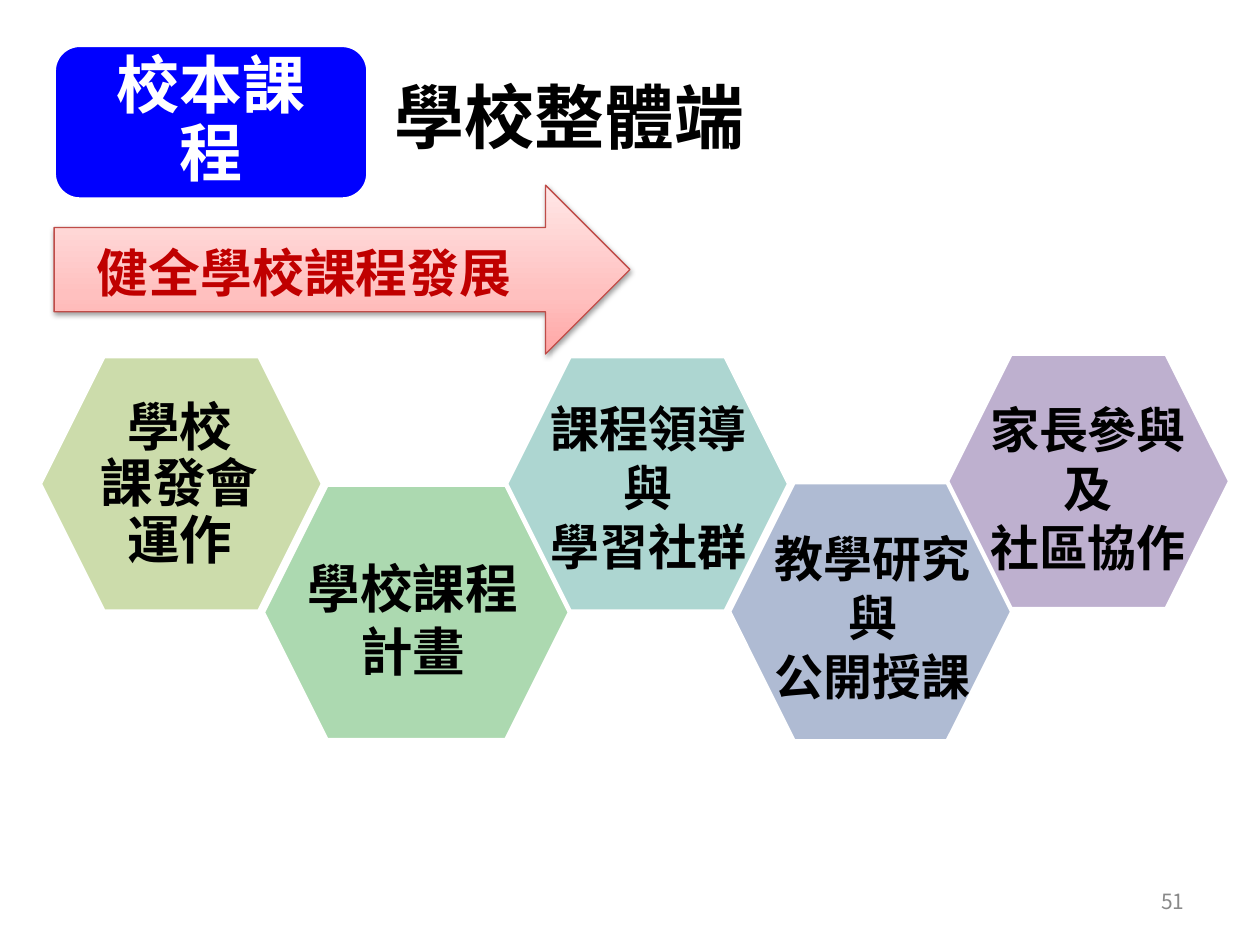
from lxml import etree
from pptx import Presentation
from pptx.dml.color import RGBColor
from pptx.enum import shapes as sh, text as tx
from pptx.oxml import parse_xml
from pptx.oxml.ns import nsdecls, qn
from pptx.util import Inches, Pt

FONT = "Noto Sans CJK SC"
HUES = {"ink": "000000", "white": "FFFFFF", "blue": "0000FF", "red": "C00000",
        "edge": "BF4C48", "gray": "898989", "olive": "9BBB59", "green": "5AB463",
        "teal": "5DAEA5", "slate": "6078A8", "plum": "7F63A1"}
BLUSH = [(0, "FFA6A5"), (35, "FFC0BF"), (100, "FFE7E7")]

TITLE = "學校整體端"
BADGE = "校本課程"
GOAL = "健全學校課程發展"
PAGE = "51"
# hue, hexagon box, text box, wording (\v breaks a line), size, line spacing
CELLS = [
    ("olive", (0.32, 2.83, 2.24, 2.02), (0.63, 3.14, 1.59, 1.43), "學校\v課發會運作", 30, 0.9),
    ("green", (2.09, 3.85, 2.43, 2.02), (2.29, 4.2, 1.97, 1.43), "學校課程計畫", 30, 1),
    ("teal", (4.02, 2.83, 2.24, 2.02), (4.24, 3.15, 1.81, 1.43), "課程領導與\v學習社群", 28, 1),
    ("slate", (5.79, 3.83, 2.24, 2.05), (6.02, 4.17, 1.81, 1.45), "教學研究與\n公開授課", 28, 1),
    ("plum", (7.52, 2.81, 2.24, 2.02), (7.65, 3.16, 1.97, 1.43), "家長參與及\n社區協作", 28, 1),
]


def rgb(hue):
    return RGBColor.from_string(HUES[hue])


def write(shape, words, size, hue="ink", bold=True, align=tx.PP_ALIGN.LEFT,
          anchor=tx.MSO_ANCHOR.TOP, pad=(0.1, 0.05), wrap=True, gap=1):
    frame = shape.text_frame
    frame.text = words
    frame.word_wrap = wrap
    frame.auto_size = tx.MSO_AUTO_SIZE.NONE
    frame.vertical_anchor = anchor
    frame.margin_left = frame.margin_right = Inches(pad[0])
    frame.margin_top = frame.margin_bottom = Inches(pad[1])
    for para in frame.paragraphs:
        para.alignment = align
        para.line_spacing = gap
        for run in para.runs:
            font = run.font
            font.name, font.size, font.bold = FONT, Pt(size), bold
            font.color.rgb = rgb(hue)
            east = etree.Element(qn("a:ea"), typeface=FONT)
            font._element.find(qn("a:latin")).addnext(east)


def draw(slide, kind, box, fill, line="white", width=2, alpha=None):
    shape = slide.shapes.add_shape(kind, *map(Inches, box))
    shape.shadow.inherit = False
    shape.fill.solid()
    shape.fill.fore_color.rgb = rgb(fill)
    shape.line.color.rgb = rgb(line)
    shape.line.width = Pt(width)
    if alpha:
        tint = shape._element.spPr.find(qn("a:solidFill"))[0]
        etree.SubElement(tint, qn("a:alpha"), val=str(alpha * 1000))
    return shape


def label(slide, box, *args, **style):
    write(slide.shapes.add_textbox(*map(Inches, box)), *args, **style)


def shade(shape):
    """Give the arrow its upward gradient and soft drop shadow."""
    props = shape._element.spPr
    stops = "".join(f'<a:gs pos="{pos * 1000}"><a:srgbClr val="{hue}"/></a:gs>'
                    for pos, hue in BLUSH)
    grad = parse_xml(f'<a:gradFill {nsdecls("a")} rotWithShape="1"><a:gsLst>{stops}'
                     '</a:gsLst><a:lin ang="16200000" scaled="0"/></a:gradFill>')
    props.replace(props.find(qn("a:solidFill")), grad)
    drop = parse_xml(f'<a:outerShdw {nsdecls("a")} blurRad="{Pt(3.1)}" dist="{Pt(1.6)}" '
                     'dir="5400000" rotWithShape="0"><a:srgbClr val="000000">'
                     '<a:alpha val="38000"/></a:srgbClr></a:outerShdw>')
    props.find(qn("a:effectLst")).append(drop)


def main():
    deck = Presentation()
    deck.slide_width, deck.slide_height = Inches(10), Inches(7.5)
    slide = deck.slides.add_slide(deck.slide_layouts[5])
    mid = {"align": tx.PP_ALIGN.CENTER, "anchor": tx.MSO_ANCHOR.MIDDLE}
    kinds = sh.MSO_SHAPE

    title = slide.shapes.title
    title.left, title.top, title.width, title.height = map(Inches, (3.03, 0.53, 3.01, 0.77))
    write(title, TITLE, 40, wrap=False)

    shade(draw(slide, kinds.RIGHT_ARROW, (0.43, 1.47, 4.57, 1.34), "red", "edge", 0.75))
    label(slide, (0.67, 1.86, 4.65, 0.55), GOAL, 29.6, "red")

    for hue, box, area, words, size, gap in CELLS:
        draw(slide, kinds.HEXAGON, box, hue, alpha=50)
        label(slide, area, words, size, pad=(0.12, 0.04), gap=gap, **mid)

    badge = draw(slide, kinds.ROUNDED_RECTANGLE, (0.43, 0.36, 2.49, 1.22), "blue")
    write(badge, BADGE, 36, "white", pad=(0.19, 0.19), gap=0.9, **mid)

    label(slide, (7.17, 6.95, 2.33, 0.4), PAGE, 12, "gray", bold=False,
          align=tx.PP_ALIGN.RIGHT, anchor=tx.MSO_ANCHOR.MIDDLE)
    deck.save("out.pptx")


if __name__ == "__main__":
    main()
